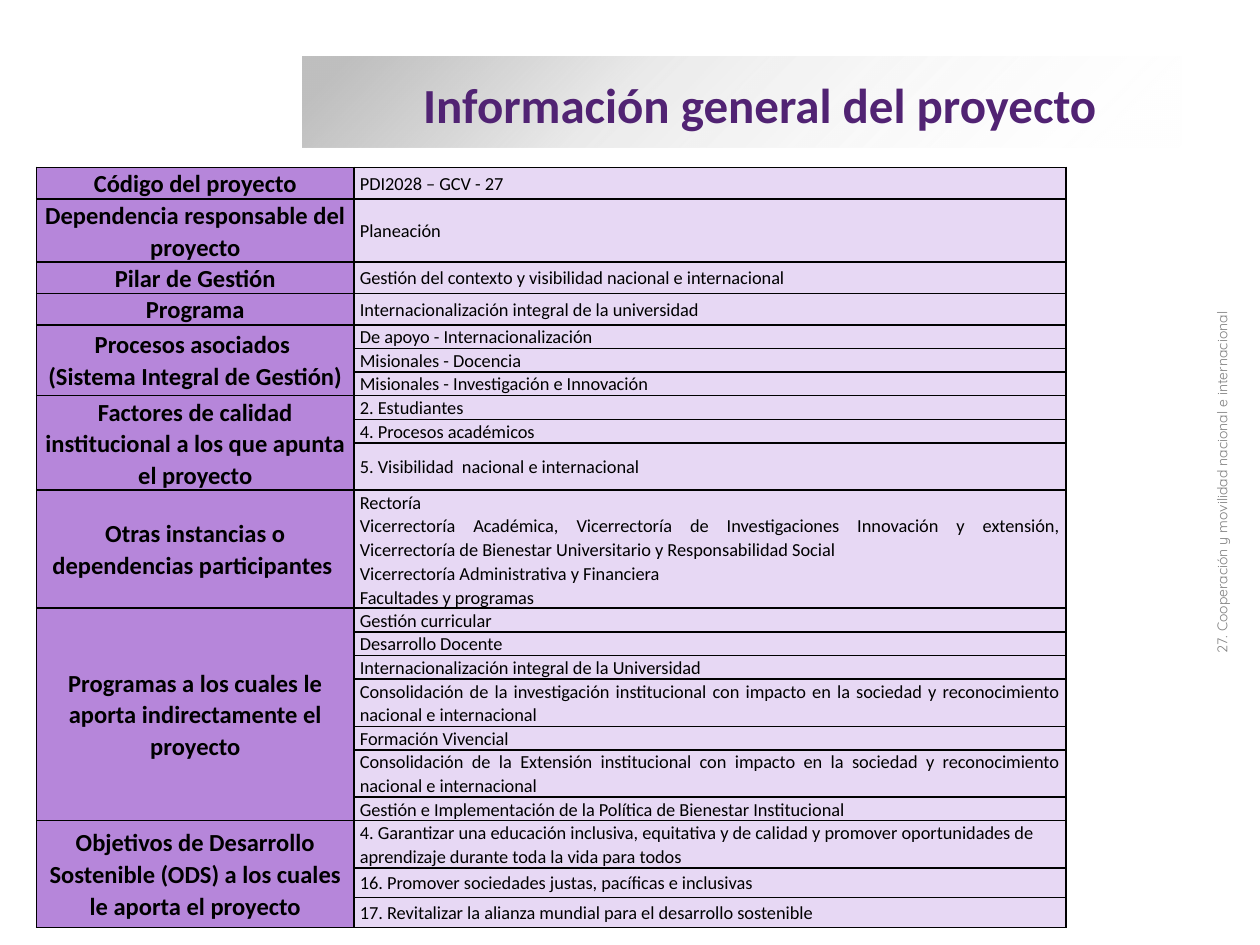
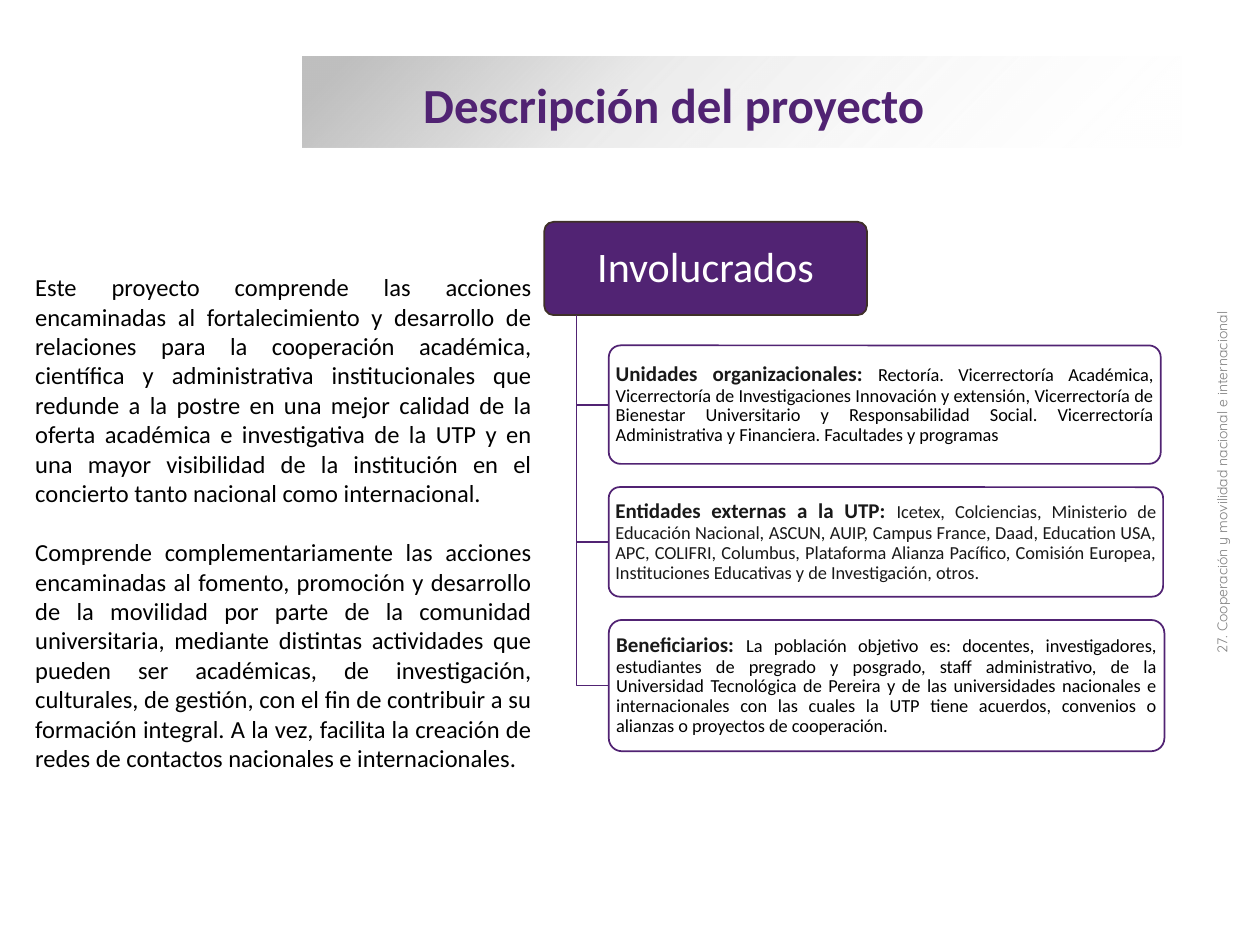
from typing import NamedTuple

from lxml.etree import SubElement
from pptx import Presentation
from pptx.dml.color import RGBColor
from pptx.enum.shapes import MSO_SHAPE
from pptx.enum.text import MSO_ANCHOR, PP_ALIGN
from pptx.oxml.ns import qn
from pptx.util import Pt

PURPLE = RGBColor(0x51, 0x23, 0x73)
LILAC = RGBColor(0xB6, 0x86, 0xDA)
PALE_LILAC = RGBColor(0xE7, 0xD8, 0xF4)
BROWN = RGBColor(0x3F, 0x30, 0x29)
SILVER = RGBColor(0xBF, 0xBF, 0xBF)
GRAY = RGBColor(0x80, 0x80, 0x80)
INK = RGBColor(0x19, 0x19, 0x19)
BLACK = RGBColor(0, 0, 0)
WHITE = RGBColor(0xFF, 0xFF, 0xFF)

BODY_FONT = "Calibri"
FOOTER_FONT = "Quicksand"
FOOTER = "27. Cooperación y movilidad nacional e internacional"
BAND_STOPS = [(5, SILVER, 100), (37, SILVER, 31), (100, WHITE, 0)]


class Box(NamedTuple):
    """Hold a rectangle in points."""
    left: float
    top: float
    width: float
    height: float

    def lengths(self):
        """Return the four values as lengths."""
        return [Pt(v) for v in self]


BAND_BOX = Box(172.8, 32.4, 502.6, 51.8)
FOOTER_BOX = Box(524.2, 267.1, 348.5, 17.3)
TABLE_BOX = Box(20.9, 95.6, 588.2, 434.5)
DESCRIPTION_BOX = Box(13, 152, 298, 296)
TREE_BOX = Box(311, 126.8, 354.4, 302.4)

LINE = 13.5
LABEL_LINE = 18
PROJECT_FACTS = [
    ("Código del proyecto", PP_ALIGN.LEFT, [(LABEL_LINE, "PDI2028 – GCV - 27")]),
    ("Dependencia responsable del proyecto", PP_ALIGN.LEFT, [(2 * LABEL_LINE, "Planeación")]),
    ("Pilar de Gestión", PP_ALIGN.LEFT,
     [(LABEL_LINE, "Gestión del contexto y visibilidad nacional e internacional")]),
    ("Programa", PP_ALIGN.JUSTIFY,
     [(LABEL_LINE, "Internacionalización integral de la universidad")]),
    ("Procesos asociados \v(Sistema Integral de Gestión)", PP_ALIGN.LEFT, [
        (LINE, "De apoyo - Internacionalización"),
        (LINE, "Misionales - Docencia"),
        (LINE, "Misionales - Investigación e Innovación")]),
    ("Factores de calidad institucional a los que apunta el proyecto", PP_ALIGN.LEFT, [
        (LINE, "2. Estudiantes"),
        (LINE, "4. Procesos académicos"),
        (2 * LINE, "5. Visibilidad  nacional e internacional")]),
    ("Otras instancias o dependencias participantes ", PP_ALIGN.JUSTIFY, [
        (5 * LINE, "Rectoría\n"
         "Vicerrectoría Académica, Vicerrectoría de Investigaciones Innovación y extensión, "
         "Vicerrectoría de Bienestar Universitario y Responsabilidad Social\n"
         "Vicerrectoría Administrativa y Financiera \n"
         "Facultades y programas")]),
    ("Programas a los cuales le aporta indirectamente el proyecto", PP_ALIGN.JUSTIFY, [
        (LINE, "Gestión curricular"),
        (LINE, "Desarrollo Docente"),
        (LINE, "Internacionalización integral de la Universidad"),
        (2 * LINE, "Consolidación de la investigación institucional con impacto en la "
         "sociedad y reconocimiento nacional e internacional"),
        (LINE, "Formación Vivencial"),
        (2 * LINE, "Consolidación de la Extensión institucional con impacto en la "
         "sociedad y reconocimiento nacional e internacional"),
        (LINE, "Gestión e Implementación de la Política de Bienestar Institucional")]),
    ("Objetivos de Desarrollo Sostenible (ODS) a los cuales le aporta el proyecto",
     PP_ALIGN.LEFT, [
         (2 * LINE, "4. Garantizar una educación inclusiva, equitativa y de calidad y promover "
          "oportunidades de aprendizaje durante toda la vida para todos"),
         (17, "16. Promover sociedades justas, pacíficas e inclusivas"),
         (17, "17. Revitalizar la alianza mundial para el desarrollo sostenible")]),
]

DESCRIPTION = [
    "Este proyecto comprende las acciones encaminadas al fortalecimiento y desarrollo de "
    "relaciones para la cooperación académica, científica y administrativa institucionales "
    "que redunde a la postre en una mejor calidad de la oferta académica e investigativa de "
    "la UTP y en una mayor visibilidad de la institución en el concierto tanto nacional como "
    "internacional.",
    "Comprende complementariamente las acciones encaminadas al fomento, promoción y "
    "desarrollo de la movilidad por parte de la comunidad universitaria, mediante distintas "
    "actividades que pueden ser académicas, de investigación, culturales, de gestión, con el "
    "fin de contribuir a su formación integral. A la vez, facilita la creación de redes de "
    "contactos nacionales e internacionales.",
]

STAKEHOLDERS = [
    (315.4, 67.7, "Unidades organizacionales: ", BLACK,
     "Rectoría. Vicerrectoría Académica, Vicerrectoría de Investigaciones Innovación y "
     "extensión, Vicerrectoría de Bienestar Universitario y Responsabilidad Social. "
     "Vicerrectoría Administrativa y Financiera. Facultades y programas"),
    (316.8, 62.6, "Entidades externas a la UTP: ", INK,
     "Icetex, Colciencias, Ministerio de Educación Nacional, ASCUN, AUIP, Campus France, "
     "Daad, Education USA, APC, COLIFRI, Columbus, Plataforma Alianza Pacífico, Comisión "
     "Europea, Instituciones Educativas y de Investigación, otros. "),
    (317.5, 75, "Beneficiarios: ", BLACK,
     "La población objetivo es: docentes, investigadores, estudiantes de pregrado y posgrado, "
     "staff administrativo, de la Universidad Tecnológica de Pereira y de las universidades "
     "nacionales e internacionales con las cuales la UTP tiene acuerdos, convenios o alianzas "
     "o proyectos de cooperación."),
]


def style_font(font, size, color, bold=False, name=BODY_FONT):
    """Set the face, size, colour and weight of a font."""
    font.name, font.size, font.bold = name, Pt(size), bold
    font.color.rgb = color


def style_text(tf, size, color, bold=False, align=PP_ALIGN.LEFT, spacing=None, name=BODY_FONT):
    """Format every paragraph and run of a text frame."""
    for p in tf.paragraphs:
        p.alignment = align
        p.line_spacing = spacing
        for r in p.runs:
            style_font(r.font, size, color, bold, name)


def set_margins(target, horizontal, vertical):
    """Set the inner margins of a text frame or cell."""
    target.margin_left = target.margin_right = Pt(horizontal)
    target.margin_top = target.margin_bottom = Pt(vertical)


def add_text(slide, box, text):
    """Add a wrapping text box and return its shape."""
    sp = slide.shapes.add_textbox(*box.lengths())
    sp.text_frame.word_wrap = True
    sp.text_frame.text = text
    return sp


def add_title_band(slide, box, title):
    """Draw the fading band with the slide title."""
    sp = slide.shapes.add_shape(MSO_SHAPE.RECTANGLE, *box.lengths())
    sp.shadow.inherit = False
    sp.line.fill.background()
    sp.fill.gradient()
    sp.fill.gradient_angle = 315
    stops = sp.fill._fill._gradFill.find(qn("a:gsLst"))
    for gs in list(stops):
        stops.remove(gs)
    for position, color, opacity in BAND_STOPS:
        gs = SubElement(stops, qn("a:gs"), pos=str(position * 1000))
        clr = SubElement(gs, qn("a:srgbClr"), val=str(color))
        SubElement(clr, qn("a:alpha"), val=str(opacity * 1000))
    tf = add_text(slide, Box(box.left + 62, box.top + 6.5, 446.4, 41), title).text_frame
    tf.vertical_anchor = MSO_ANCHOR.MIDDLE
    style_text(tf, 28, PURPLE, bold=True)


def add_footer(slide, box):
    """Write the project name up the right edge."""
    sp = add_text(slide, box, FOOTER)
    sp.rotation = 270
    style_text(sp.text_frame, 8, GRAY, align=PP_ALIGN.CENTER, name=FOOTER_FONT)


def add_base_slide(prs, title):
    """Add a blank slide with the shared title band and footer."""
    slide = prs.slides.add_slide(prs.slide_layouts[6])
    add_title_band(slide, BAND_BOX, title)
    add_footer(slide, FOOTER_BOX)
    return slide


def style_cell(cell, fill):
    """Give a cell black borders, a fill and tight margins."""
    tc_pr = cell._tc.get_or_add_tcPr()
    for side in ("lnL", "lnR", "lnT", "lnB"):
        ln = SubElement(tc_pr, qn(f"a:{side}"), w=str(Pt(1)))
        SubElement(SubElement(ln, qn("a:solidFill")), qn("a:srgbClr"), val=str(BLACK))
    cell.fill.solid()
    cell.fill.fore_color.rgb = fill
    cell.vertical_anchor = MSO_ANCHOR.MIDDLE
    set_margins(cell, 3.4, 0)


def add_facts_table(slide, box):
    """Build the two-column table of project facts."""
    count = sum(len(values) for _, _, values in PROJECT_FACTS)
    table = slide.shapes.add_table(count, 2, *box.lengths()).table
    table.first_row = table.horz_banding = False
    label_width = 181.4
    table.columns[0].width = Pt(label_width)
    table.columns[1].width = Pt(box.width - label_width)
    row = 0
    for label, align, values in PROJECT_FACTS:
        first = table.cell(row, 0)
        for height, value in values:
            table.rows[row].height = Pt(height)
            style_cell(table.cell(row, 0), LILAC)
            cell = table.cell(row, 1)
            style_cell(cell, PALE_LILAC)
            cell.text_frame.text = value
            style_text(cell.text_frame, 10.5, BLACK, align=align, spacing=1.07)
            row += 1
        if len(values) > 1:
            first.merge(table.cell(row - 1, 0))
        first.text_frame.text = label
        style_text(first.text_frame, 14, BLACK, True, PP_ALIGN.CENTER, 1.07)


def add_description(slide, box):
    """Write the justified project description."""
    tf = add_text(slide, box, "\n".join(DESCRIPTION)).text_frame
    style_text(tf, 14, BLACK, align=PP_ALIGN.JUSTIFY)
    for p in tf.paragraphs[1:]:
        p.space_before = Pt(17)


def add_card(slide, box, fill, line):
    """Add a rounded card and return its text frame."""
    sp = slide.shapes.add_shape(MSO_SHAPE.ROUNDED_RECTANGLE, *box.lengths())
    sp.adjustments[0] = 0.1
    sp.shadow.inherit = False
    sp.fill.solid()
    sp.fill.fore_color.rgb = fill
    sp.line.color.rgb = line
    sp.line.width = Pt(1)
    tf = sp.text_frame
    tf.word_wrap = True
    tf.vertical_anchor = MSO_ANCHOR.MIDDLE
    set_margins(tf, 2, 1.4)
    return tf


def add_branch(slide, x, y, end_x, end_y):
    """Draw an elbow line down and then right."""
    fb = slide.shapes.build_freeform(Pt(x), Pt(y))
    fb.add_line_segments([(Pt(x), Pt(end_y)), (Pt(end_x), Pt(end_y))], close=False)
    sp = fb.convert_to_shape()
    sp.shadow.inherit = False
    sp.fill.background()
    sp.line.color.rgb = PURPLE
    sp.line.width = Pt(1)


def add_stakeholder_tree(slide, box):
    """Hang the stakeholder cards below their heading."""
    root = Box(box.left, box.top, 184.4, 53.3)
    root_bottom = root.top + root.height
    tf = add_card(slide, root, PURPLE, BROWN)
    tf.text = "Involucrados"
    style_text(tf, 24, WHITE, align=PP_ALIGN.CENTER, spacing=0.9)
    trunk = root.left + root.width * 0.1
    left = root.left + root.width * 0.2
    top = root_bottom + 17.3
    for width, height, heading, color, body in STAKEHOLDERS:
        add_branch(slide, trunk, root_bottom, left, top + height / 2)
        tf = add_card(slide, Box(left, top, width, height), WHITE, PURPLE)
        p = tf.paragraphs[0]
        for text in (heading, body):
            p.add_run().text = text
        style_text(tf, 10.5, color, align=PP_ALIGN.JUSTIFY, spacing=0.9)
        style_font(p.runs[0].font, 12, INK, bold=True)
        top += height + 13.3


def build_facts_slide(prs):
    """Build the general information slide."""
    slide = add_base_slide(prs, "Información general del proyecto")
    add_facts_table(slide, TABLE_BOX)


def build_description_slide(prs):
    """Build the project description slide."""
    slide = add_base_slide(prs, "Descripción del proyecto")
    add_stakeholder_tree(slide, TREE_BOX)
    add_description(slide, DESCRIPTION_BOX)


def main():
    """Build and save the presentation."""
    prs = Presentation()
    prs.slide_width, prs.slide_height = Pt(720), Pt(540)
    build_facts_slide(prs)
    build_description_slide(prs)
    prs.save("out.pptx")


if __name__ == "__main__":
    main()
